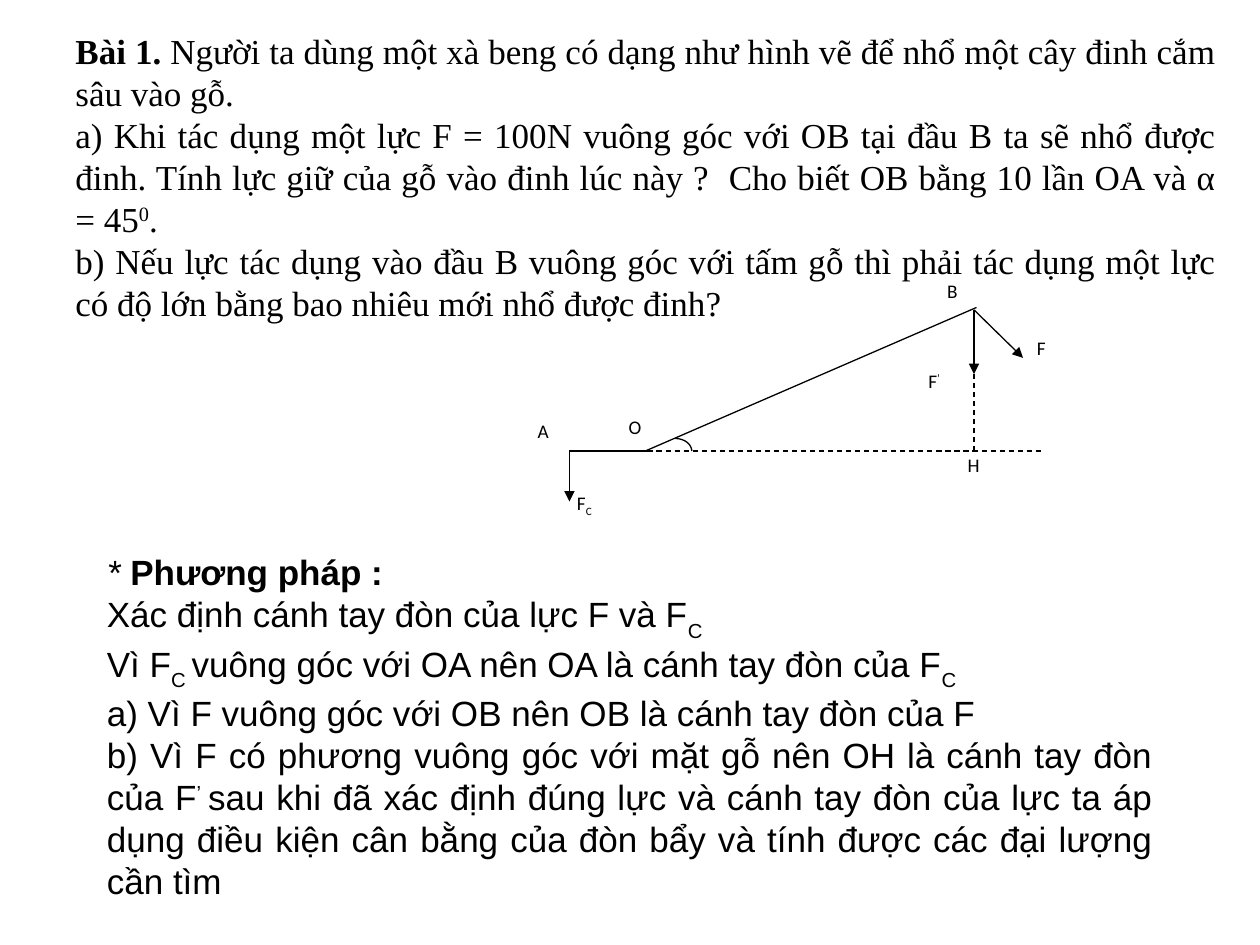
from dataclasses import dataclass
from math import cos, pi, sin

from lxml.etree import SubElement
from pptx import Presentation
from pptx.dml.color import RGBColor
from pptx.enum.dml import MSO_LINE
from pptx.enum.shapes import MSO_CONNECTOR
from pptx.enum.text import MSO_ANCHOR, MSO_AUTO_SIZE, PP_ALIGN
from pptx.oxml.ns import qn
from pptx.shapes.group import GroupShape
from pptx.slide import Slide
from pptx.util import Pt

BLACK = RGBColor(0x00, 0x00, 0x00)
LINE_WIDTH = 0.75
SUPERSCRIPT = 30000
SUBSCRIPT = -30000
LABEL_SUBSCRIPT = -25000

Point = tuple[float, float]


@dataclass(frozen=True)
class TextRun:
    text: str
    bold: bool = False
    italic: bool = False
    baseline: int = 0


@dataclass(frozen=True)
class Segment:
    start: Point
    end: Point
    dashed: bool = False
    arrow: bool = False


@dataclass(frozen=True)
class Label:
    left: float
    top: float
    width: float
    height: float
    runs: list[TextRun]


def add_runs(paragraph, runs: list[TextRun], font_name: str, size: float) -> None:
    for item in runs:
        run = paragraph.add_run()
        run.text = item.text
        font = run.font
        font.name = font_name
        font.size = Pt(size)
        font.color.rgb = BLACK
        font.bold = item.bold
        font.italic = item.italic
        if item.baseline:
            run._r.get_or_add_rPr().set("baseline", str(item.baseline))


def add_passage(slide: Slide, box: tuple[float, float, float, float],
                paragraphs: list[list[TextRun]], font_name: str) -> None:
    frame = slide.shapes.add_textbox(*map(Pt, box)).text_frame
    frame.word_wrap = True
    frame.auto_size = MSO_AUTO_SIZE.SHAPE_TO_FIT_TEXT
    frame.vertical_anchor = MSO_ANCHOR.MIDDLE
    for index, runs in enumerate(paragraphs):
        paragraph = frame.add_paragraph() if index else frame.paragraphs[0]
        paragraph.alignment = PP_ALIGN.JUSTIFY
        add_runs(paragraph, runs, font_name, 20)


def add_segment(group: GroupShape, segment: Segment) -> None:
    connector = group.shapes.add_connector(
        MSO_CONNECTOR.STRAIGHT, *map(Pt, segment.start + segment.end))
    line = connector.line
    line.color.rgb = BLACK
    line.width = Pt(LINE_WIDTH)
    if segment.dashed:
        line.dash_style = MSO_LINE.DASH
    if segment.arrow:
        SubElement(line._get_or_add_ln(), qn("a:tailEnd"), type="triangle")
    SubElement(connector._element.spPr, qn("a:effectLst"))


def add_angle_arc(group: GroupShape, center: Point, radii: Point, steps: int = 12) -> None:
    angles = [pi / 2 * (1 - step / steps) for step in range(steps + 1)]
    points = [(Pt(center[0] + radii[0] * cos(angle)), Pt(center[1] - radii[1] * sin(angle)))
              for angle in angles]
    builder = group.shapes.build_freeform(*points[0])
    builder.add_line_segments(points[1:], close=False)
    arc = builder.convert_to_shape()
    arc.shadow.inherit = False
    arc.fill.background()
    arc.line.color.rgb = BLACK
    arc.line.width = Pt(LINE_WIDTH)


def add_label(group: GroupShape, label: Label) -> None:
    box = (label.left, label.top, label.width, label.height)
    frame = group.shapes.add_textbox(*map(Pt, box)).text_frame
    frame.word_wrap = True
    add_runs(frame.paragraphs[0], label.runs, "Calibri", 11)


PROBLEM = [
    [TextRun("Bài 1. ", bold=True),
     TextRun("Người ta dùng một xà beng có dạng như hình vẽ để nhổ một cây đinh cắm "
             "sâu vào gỗ.")],
    [TextRun("a) Khi tác dụng một lực F = 100N vuông góc với OB tại đầu B ta sẽ nhổ được "
             "đinh. Tính lực giữ của gỗ vào đinh lúc này ?  Cho biết OB bằng 10 lần OA "
             "và α = 45"),
     TextRun("0", baseline=SUPERSCRIPT), TextRun(".")],
    [TextRun("b) Nếu lực tác dụng vào đầu B vuông góc với tấm gỗ thì phải tác dụng một lực "
             "có độ lớn bằng bao nhiêu mới nhổ được đinh?")],
]

METHOD = [
    [TextRun("* ", italic=True), TextRun("Phương pháp :", bold=True)],
    [TextRun("Xác định cánh tay đòn của lực F và F"), TextRun("C", baseline=SUBSCRIPT)],
    [TextRun("Vì F"), TextRun("C ", baseline=SUBSCRIPT),
     TextRun("vuông góc với OA nên OA là cánh tay đòn của F"),
     TextRun("C", baseline=SUBSCRIPT)],
    [TextRun("a) Vì F vuông góc với OB nên OB là cánh tay đòn của F")],
    [TextRun("b) Vì F có phương vuông góc với mặt gỗ nên OH là cánh tay đòn của F"),
     TextRun("’ ", baseline=SUPERSCRIPT),
     TextRun("sau khi đã xác định đúng lực và cánh tay đòn của lực ta áp dụng điều kiện "
             "cân bằng của đòn bẩy và tính được các đại lượng cần tìm")],
]

GROUND = 257.8
POINT_A = (325.4, GROUND)
POINT_O = (368.6, GROUND)
POINT_B = (558, 175.7)
POINT_H = (556.6, GROUND)
FORCE_START = (556.6, 177.1)
FORCE_DOWN_END = (556.6, 213.8)
GROUND_START = (370, GROUND)

SEGMENTS = [
    Segment(POINT_A, GROUND_START),
    Segment(GROUND_START, (594.7, GROUND), dashed=True),
    Segment(POINT_O, POINT_B),
    Segment(FORCE_START, FORCE_DOWN_END, arrow=True),
    Segment(FORCE_DOWN_END, POINT_H, dashed=True),
    Segment(FORCE_START, (584.6, 204.5), arrow=True),
    Segment(POINT_A, (325.4, 286.6), arrow=True),
]

LABELS = [
    Label(322.6, 277.2, 43.9, 24.5, [TextRun("F"), TextRun("C", baseline=LABEL_SUBSCRIPT)]),
    Label(585.4, 188.6, 32.4, 25.2, [TextRun("F")]),
    Label(523.4, 207.4, 37.4, 23, [TextRun("F"), TextRun("’", baseline=SUPERSCRIPT)]),
    Label(300.2, 236.2, 36.7, 20.9, [TextRun("A")]),
    Label(352.1, 234, 38.9, 23, [TextRun("O")]),
    Label(534.2, 156.2, 41.8, 28.8, [TextRun("B")]),
    Label(545.8, 255.6, 34.6, 31, [TextRun("H")]),
]


def main() -> None:
    presentation = Presentation()
    presentation.slide_width = Pt(720)
    presentation.slide_height = Pt(540)
    slide = presentation.slides.add_slide(presentation.slide_layouts[6])

    add_passage(slide, (36, 12.2, 666, 177.1), PROBLEM, "Times New Roman")
    lever = slide.shapes.add_group_shape()
    for segment in SEGMENTS:
        add_segment(lever, segment)
    add_angle_arc(lever, center=(385.9, GROUND), radii=(9.4, 7.2))
    for label in LABELS:
        add_label(lever, label)
    add_passage(slide, (54, 314, 612, 202), METHOD, "Arial")

    presentation.save("out.pptx")


if __name__ == "__main__":
    main()
